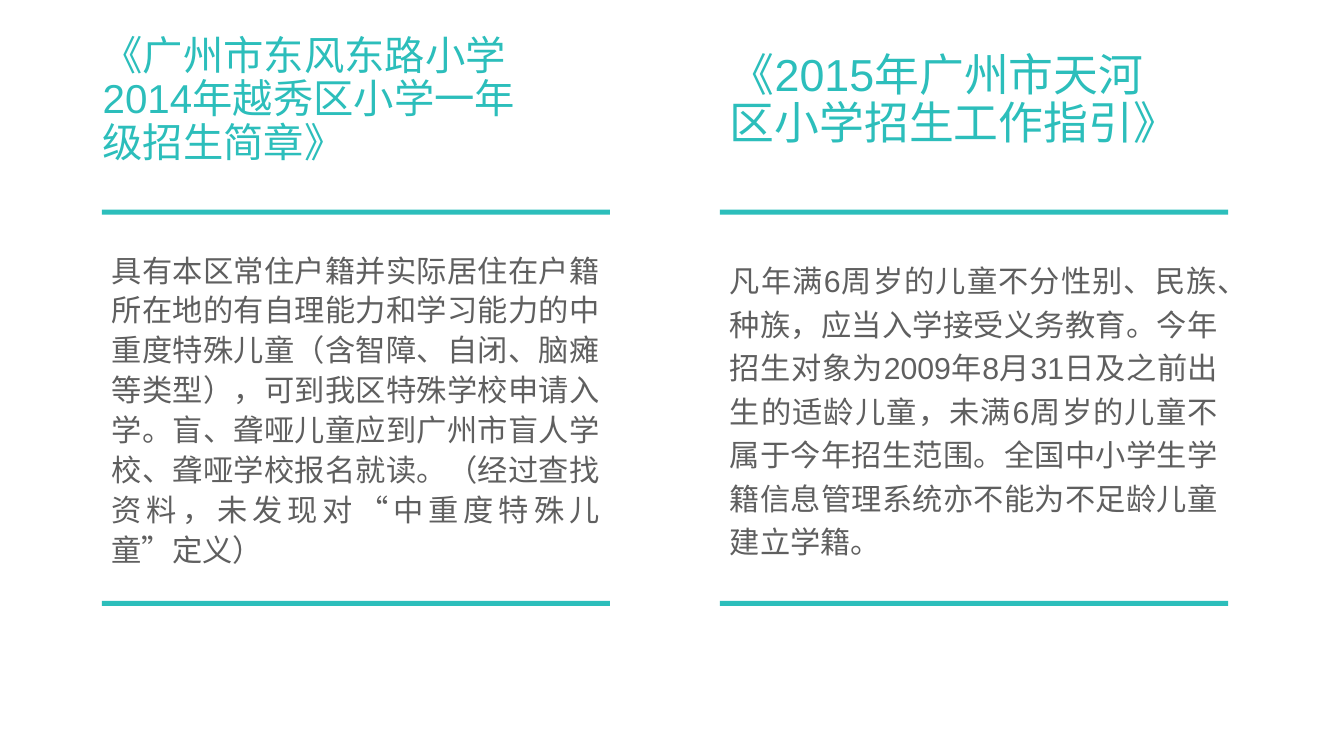
from dataclasses import dataclass

from pptx import Presentation
from pptx.dml.color import RGBColor
from pptx.enum.shapes import MSO_SHAPE
from pptx.enum.text import MSO_ANCHOR, PP_ALIGN
from pptx.util import Inches, Pt

RECTANGLE = MSO_SHAPE.RECTANGLE
MIDDLE = MSO_ANCHOR.MIDDLE
LEFT, JUSTIFY = PP_ALIGN.LEFT, PP_ALIGN.JUSTIFY


@dataclass(frozen=True)
class Theme:
    font: str = "Arial"
    accent: RGBColor = RGBColor(0x2C, 0xBE, 0xBB)
    body: RGBColor = RGBColor(0x5F, 0x5F, 0x5F)
    body_size: float = 21.6


THEME = Theme()

# Grid: two columns and the rows they share, in inches
SLIDE_SIZE = (13.33, 7.5)
COLUMN_LEFT, COLUMN_STEP, COLUMN_WIDTH = 1.01, 6.13, 5.04
TITLE_TOP, TITLE_WIDTH, TITLE_HEIGHT = 0.43, 4.67, 1.14
BODY_TOP, BODY_HEIGHT = 2.23, 3.63
RULE_TOPS, RULE_HEIGHT = (2.08, 5.96), 0.05


@dataclass(frozen=True)
class Policy:
    title: str
    title_size: float
    title_shift: float
    body: str
    body_spacing: float


POLICIES = (
    Policy(
        "《广州市东风东路小学2014年越秀区小学一年级招生简章》", 28.8, -0.09,
        "具有本区常住户籍并实际居住在户籍所在地的有自理能力和学习能力的"
        "中重度特殊儿童（含智障、自闭、脑瘫等类型），可到我区特殊学校申请入学。"
        "盲、聋哑儿童应到广州市盲人学校、聋哑学校报名就读。"
        "（经过查找资料，未发现对“中重度特殊儿童”定义）", 1.1),
    Policy(
        "《2015年广州市天河区小学招生工作指引》", 32, 0,
        "凡年满6周岁的儿童不分性别、民族、种族，应当入学接受义务教育。"
        "今年招生对象为2009年8月31日及之前出生的适龄儿童，"
        "未满6周岁的儿童不属于今年招生范围。"
        "全国中小学生学籍信息管理系统亦不能为不足龄儿童建立学籍。", 1.2),
)


def add_text(slide, box, text, size, color, spacing, alignment):
    shape = slide.shapes.add_textbox(*map(Inches, box))
    frame = shape.text_frame
    frame.word_wrap = True
    frame.vertical_anchor = MIDDLE
    paragraph = frame.paragraphs[0]
    paragraph.alignment = alignment
    paragraph.line_spacing = spacing
    run = paragraph.add_run()
    run.text = text
    run.font.name = THEME.font
    run.font.size = Pt(size)
    run.font.color.rgb = color


def add_rule(slide, left, top):
    shape = slide.shapes.add_shape(
        RECTANGLE, *map(Inches, (left, top, COLUMN_WIDTH, RULE_HEIGHT)))
    shape.shadow.inherit = False
    shape.fill.solid()
    shape.fill.fore_color.rgb = THEME.accent
    shape.line.fill.background()


def add_policy(slide, left, policy):
    # Heading
    title_box = (left + policy.title_shift, TITLE_TOP, TITLE_WIDTH, TITLE_HEIGHT)
    add_text(slide, title_box, policy.title, policy.title_size,
             THEME.accent, 0.9, LEFT)
    # Body between two rules
    body_box = (left, BODY_TOP, COLUMN_WIDTH, BODY_HEIGHT)
    add_text(slide, body_box, policy.body, THEME.body_size,
             THEME.body, policy.body_spacing, JUSTIFY)
    for top in RULE_TOPS:
        add_rule(slide, left, top)


def main():
    presentation = Presentation()
    presentation.slide_width, presentation.slide_height = map(Inches, SLIDE_SIZE)
    slide = presentation.slides.add_slide(presentation.slide_layouts[6])
    for column, policy in enumerate(POLICIES):
        add_policy(slide, COLUMN_LEFT + column * COLUMN_STEP, policy)
    presentation.save("out.pptx")


if __name__ == "__main__":
    main()
